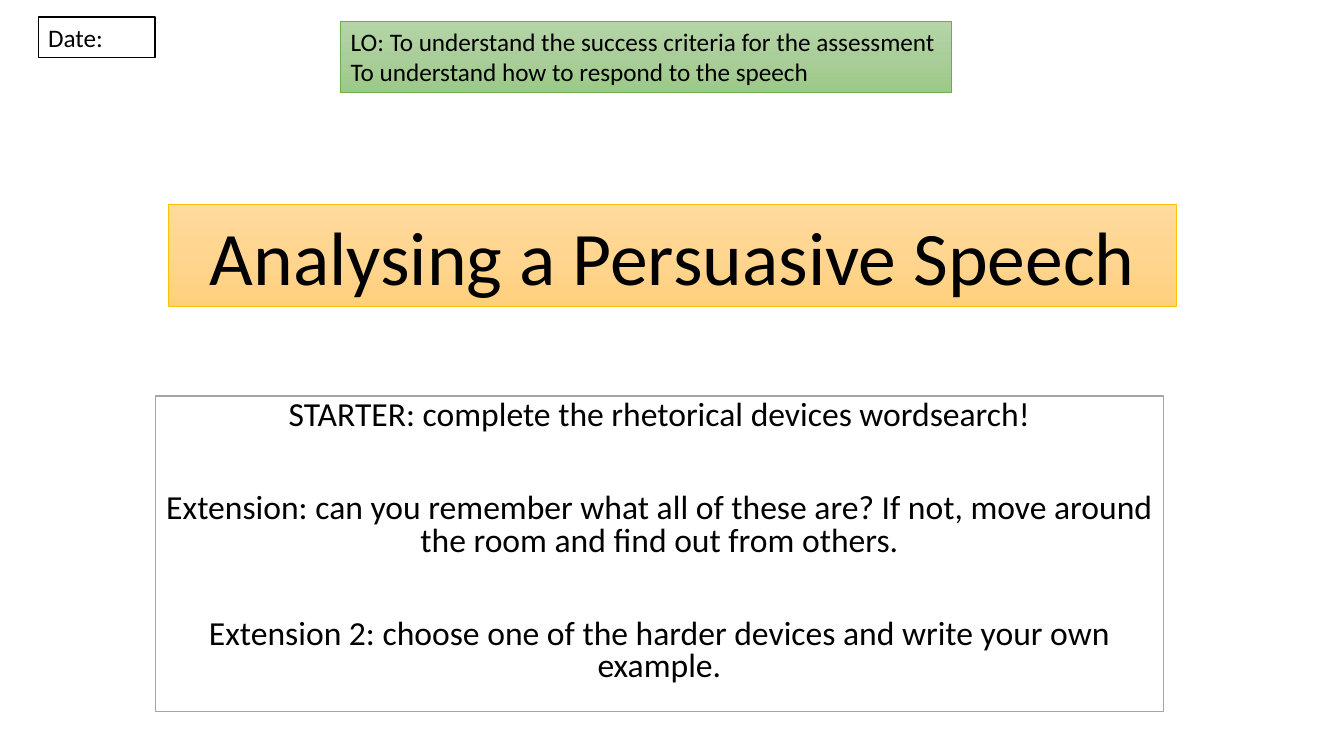
from copy import deepcopy

from pptx import Presentation
from pptx.dml.color import RGBColor
from pptx.enum.text import MSO_ANCHOR as Anchor, MSO_AUTO_SIZE as AutoSize, PP_ALIGN as Align
from pptx.oxml.ns import qn
from pptx.util import Inches, Pt

COLOURS = {
    "text": "000000",
    "paper": "FFFFFF",
    "grey": "A5A5A5",
    "gold": "FFC000",
    "green": "70AD47",
    "gold_fade": ("FFDB9E", "FFD590", "FFD07C"),
    "green_fade": ("B5D5A7", "AACE9A", "9CC987"),
}


class LessonSlide:
    font = "Calibri"

    def __init__(self, deck):
        self.slide = deck.slides.add_slide(deck.slide_layouts[6])

    def colour(self, name):
        return RGBColor.from_string(COLOURS[name])

    def fade(self, panel, name):
        fill = panel.fill
        fill.gradient()
        fill.gradient_angle = 270
        stops = next(panel._element.iter(qn("a:gsLst")))
        stops.insert(1, deepcopy(stops[0]))
        for stop, position, shade in zip(fill.gradient_stops, (0, 0.5, 1), COLOURS[name]):
            stop.position = position
            stop.color.rgb = RGBColor.from_string(shade)

    def panel(self, place, lines, size, border, weight=1, fade=None, align=Align.LEFT,
              anchor=Anchor.TOP, spacing=None, gap=0, wrap=True):
        panel = self.slide.shapes.add_textbox(*map(Inches, place))
        if fade:
            self.fade(panel, fade)
        else:
            panel.fill.solid()
            panel.fill.fore_color.rgb = self.colour("paper")
        panel.line.color.rgb = self.colour(border)
        panel.line.width = Pt(weight)
        frame = panel.text_frame
        frame.word_wrap = wrap
        frame.auto_size = AutoSize.NONE if wrap else AutoSize.SHAPE_TO_FIT_TEXT
        frame.vertical_anchor = anchor
        frame.text = "\n".join(lines)
        for number, paragraph in enumerate(frame.paragraphs):
            paragraph.alignment = align
            paragraph.line_spacing = spacing
            if number and gap:
                paragraph.space_before = Pt(gap)
            paragraph.font.name = self.font
            paragraph.font.size = Pt(size)
            paragraph.font.color.rgb = self.colour("text")


def main():
    deck = Presentation()
    deck.slide_width, deck.slide_height = Inches(13.33), Inches(7.5)
    lesson = LessonSlide(deck)
    lesson.panel((1.67, 2.03, 10, 1.01), ["Analysing a Persuasive Speech"], 54, "gold", 0.5,
                 fade="gold_fade", align=Align.CENTER, anchor=Anchor.BOTTOM, spacing=0.9)
    tasks = [
        "STARTER: complete the rhetorical devices wordsearch!",
        "Extension: can you remember what all of these are? "
        "If not, move around the room and find out from others.",
        "Extension 2: choose one of the harder devices and write your own example.",
    ]
    lesson.panel((1.54, 3.93, 10, 3.13), tasks, 24, "grey",
                 align=Align.CENTER, spacing=0.8, gap=43.4)
    lesson.panel((0.38, 0.17, 1.16, 0.4), ["Date:"], 18, "text", wrap=False)
    objectives = [
        "LO: To understand the success criteria for the assessment",
        "To understand how to respond to the speech",
    ]
    lesson.panel((3.38, 0.21, 6.06, 0.71), objectives, 18, "green", 0.5,
                 fade="green_fade", wrap=False)
    deck.save("out.pptx")


if __name__ == "__main__":
    main()
